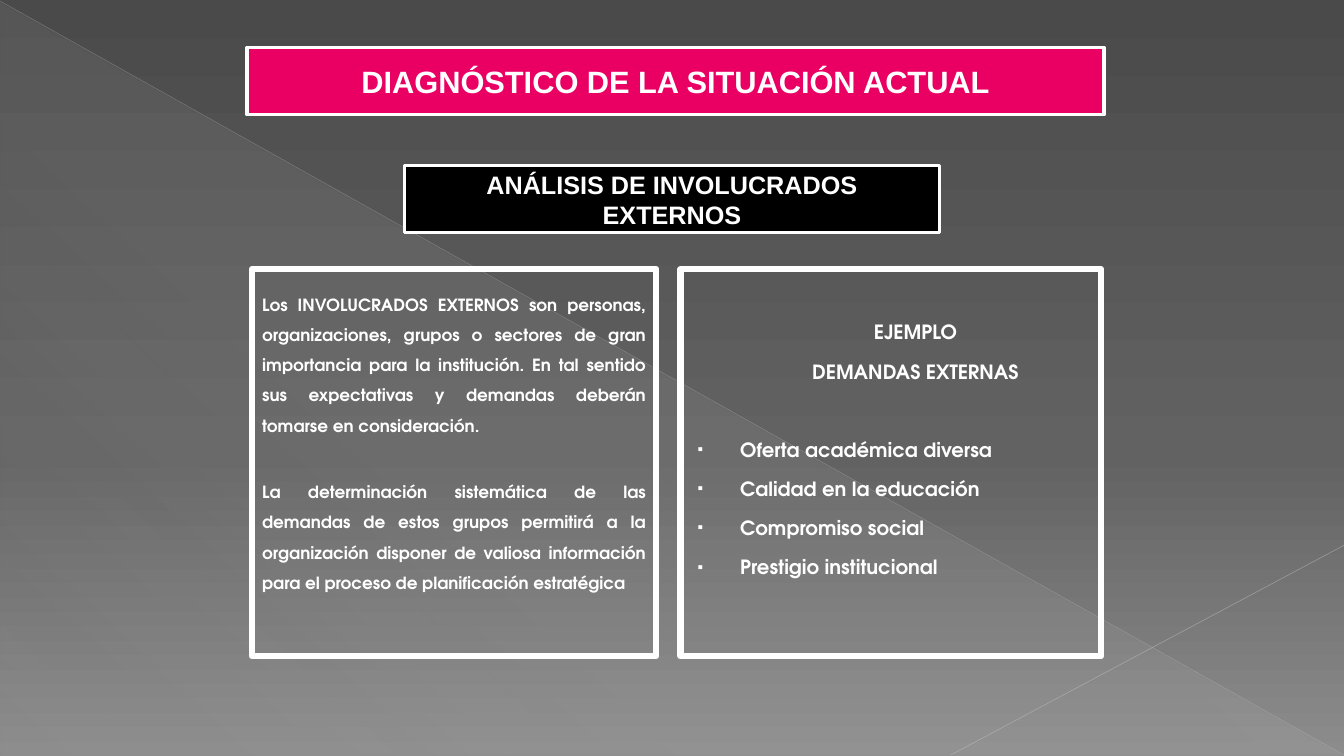
import lxml.etree
import pptx
import pptx.dml.color
import pptx.enum.shapes
import pptx.enum.text
import pptx.oxml
import pptx.oxml.ns
import pptx.util

Inches, Pt = pptx.util.Inches, pptx.util.Pt
RGBColor = pptx.dml.color.RGBColor
ALIGN = pptx.enum.text.PP_ALIGN
ANCHOR = pptx.enum.text.MSO_ANCHOR
RECTANGLE = pptx.enum.shapes.MSO_SHAPE.RECTANGLE
TRIANGLE = pptx.enum.shapes.MSO_SHAPE.RIGHT_TRIANGLE
STRAIGHT = pptx.enum.shapes.MSO_CONNECTOR.STRAIGHT
qn = pptx.oxml.ns.qn

WHITE = RGBColor(0xFF, 0xFF, 0xFF)
BLACK = RGBColor(0x00, 0x00, 0x00)
PINK = RGBColor(0xE9, 0x00, 0x62)
DARK = RGBColor(0x4A, 0x4A, 0x4A)
MID = RGBColor(0x62, 0x62, 0x62)
LIGHT = RGBColor(0x8C, 0x8C, 0x8C)
SHEEN = RGBColor(0xD2, 0xD2, 0xD2)
LONG_RAY = RGBColor(0xBF, 0xBF, 0xBF)
SHORT_RAY = RGBColor(0xC6, 0xC6, 0xC6)

HEAD_FONT = "Arial"
BODY_FONT = "TeX Gyre Adventor"

EXPLANATION = [
    "Los INVOLUCRADOS EXTERNOS son personas, organizaciones, grupos o sectores "
    "de gran importancia para la institución. En tal sentido sus expectativas y "
    "demandas deberán tomarse en consideración.",
    "La determinación sistemática de las demandas de estos grupos permitirá a la "
    "organización disponer de valiosa información para el proceso de "
    "planificación estratégica",
]
EXAMPLE_HEADS = ["EJEMPLO", "DEMANDAS EXTERNAS"]
DEMANDS = ["Oferta académica diversa", "Calidad en la educación",
           "Compromiso social", "Prestigio institucional"]


def add_child(parent, tag, **attrs):
    """Append a namespaced child element with the given attributes."""
    child = lxml.etree.SubElement(parent, qn(tag))
    for name, value in attrs.items():
        child.set(name, str(value))
    return child


def set_gradient(fill, grad, angle, stops):
    """Fill with a linear gradient of (position, colour, opacity) percent stops."""
    fill.gradient()
    for child in list(grad()):
        grad().remove(child)
    stop_list = add_child(grad(), "a:gsLst")
    for position, colour, opacity in stops:
        stop = add_child(stop_list, "a:gs", pos=position * 1000)
        rgb = add_child(stop, "a:srgbClr", val=colour)
        add_child(rgb, "a:alpha", val=opacity * 1000)
    add_child(grad(), "a:lin", ang=angle * 60000, scaled=0)


def add_ray(s, start, end, colour, width, opacity):
    """Draw one thin translucent line across the backdrop."""
    ray = s.shapes.add_connector(STRAIGHT, *map(Inches, start + end))
    ray.line.color.rgb = colour
    ray.line.width = Pt(width)
    rgb = ray.element.spPr.find(".//" + qn("a:srgbClr"))
    add_child(rgb, "a:alpha", val=opacity * 1000)
    add_child(ray.element.spPr, "a:effectLst")


def add_backdrop(s, width, height):
    """Paint the grey gradient, the sheen triangle and the two rays."""
    back = s.background
    set_gradient(back.fill, lambda: s.element.find(".//" + qn("p:bgPr") + "/" + qn("a:gradFill")),
                 90, [(0, DARK, 100), (60, MID, 100), (100, LIGHT, 100)])
    sheen = s.shapes.add_shape(TRIANGLE, 0, Inches(0.02), Inches(width), Inches(height - 0.02))
    sheen.shadow.inherit = False
    sheen.line.fill.background()
    set_gradient(sheen.fill, lambda: sheen.element.spPr.find(qn("a:gradFill")),
                 133, [(0, SHEEN, 10), (70, SHEEN, 8), (100, SHEEN, 1)])
    add_ray(s, (0, 0.01), (width, height - 0.01), LONG_RAY, 0.39, 35)
    add_ray(s, (width, 5.41), (9.43, height - 0.01), SHORT_RAY, 0.47, 45)


def place(sp, box, line_width, inset_top=0.05):
    """Move a shape to its box, bring it to the front and outline it in white."""
    sp.left, sp.top, sp.width, sp.height = map(Inches, box)
    sp.element.getparent().append(sp.element)
    sp.line.color.rgb = WHITE
    sp.line.width = Pt(line_width)
    tf = sp.text_frame
    tf.word_wrap = True
    tf.auto_size = pptx.enum.text.MSO_AUTO_SIZE.NONE
    tf.margin_left = tf.margin_right = Inches(0.1)
    tf.margin_top, tf.margin_bottom = Inches(inset_top), Inches(0.05)
    return tf


def set_font(p, name, size):
    """Give a paragraph bold white type."""
    p.font.name, p.font.size, p.font.bold = name, Pt(size), True
    p.font.color.rgb = WHITE


def fill_banner(sp, box, lines, colour, size):
    """Set centred heading lines on a solid colour."""
    tf = place(sp, box, 2.25)
    tf.vertical_anchor = ANCHOR.MIDDLE
    sp.fill.solid()
    sp.fill.fore_color.rgb = colour
    tf.text = "\n".join(lines)
    for p in tf.paragraphs:
        p.alignment = ALIGN.CENTER
        set_font(p, HEAD_FONT, size)


def set_list_style(p, indent, hanging, bullet):
    """Set a paragraph's indents and its bullet, if any."""
    pPr = p._p.get_or_add_pPr()
    pPr.set("marL", str(Inches(indent)))
    pPr.set("indent", str(-Inches(hanging)))
    if not bullet:
        add_child(pPr, "a:buNone")
        return
    add_child(add_child(pPr, "a:buClr"), "a:srgbClr", val=WHITE)
    add_child(pPr, "a:buSzPct", val=80000)
    add_child(pPr, "a:buFont", typeface=HEAD_FONT)
    add_child(pPr, "a:buChar", char=bullet)


def fill_panel(sp, box, items, size, inset_top):
    """Fill an outlined panel with (text, alignment, space before, indent, hanging, bullet)."""
    tf = place(sp, box, 4.5, inset_top)
    tf.vertical_anchor = ANCHOR.TOP
    tf.text = "\n".join(item[0] for item in items)
    for p, (_, alignment, before, indent, hanging, bullet) in zip(tf.paragraphs, items):
        p.alignment = alignment
        p.line_spacing = 1.5
        p.space_before = Pt(before)
        p.space_after = Pt(0)
        set_list_style(p, indent, hanging, bullet)
        set_font(p, BODY_FONT, size)


def main():
    """Build the slide and save it."""
    prs = pptx.Presentation()
    width, height = 13.33, 7.5
    prs.slide_width, prs.slide_height = Inches(width), Inches(height)
    s = prs.slides.add_slide(prs.slide_layouts[3])
    title, left, right = list(s.placeholders)[:3]
    add_backdrop(s, width, height)

    explanation = [(text, ALIGN.JUSTIFY, 26 * i, 0, 0, None)
                   for i, text in enumerate(EXPLANATION)]
    fill_panel(left, (2.5, 2.67, 4.01, 3.84), explanation, 12, 0.15)

    example = [(text, ALIGN.CENTER, 2.8 * i, 0.49, 0, None)
               for i, text in enumerate(EXAMPLE_HEADS)]
    example += [(text, ALIGN.JUSTIFY, 2.8 if i else 30.5, 0.49, 0.42, "▪")
                for i, text in enumerate(DEMANDS)]
    fill_panel(right, (6.75, 2.67, 4.17, 3.84), example, 14, 0.39)

    fill_banner(title, (2.45, 0.47, 8.5, 0.67),
                ["DIAGNÓSTICO DE LA SITUACIÓN ACTUAL"], PINK, 22)
    subject = s.shapes.add_shape(RECTANGLE, 0, 0, 0, 0)
    subject.shadow.inherit = False
    fill_banner(subject, (4.01, 1.64, 5.31, 0.67),
                ["ANÁLISIS DE INVOLUCRADOS", "EXTERNOS"], BLACK, 18)
    prs.save("out.pptx")


if __name__ == "__main__":
    main()
